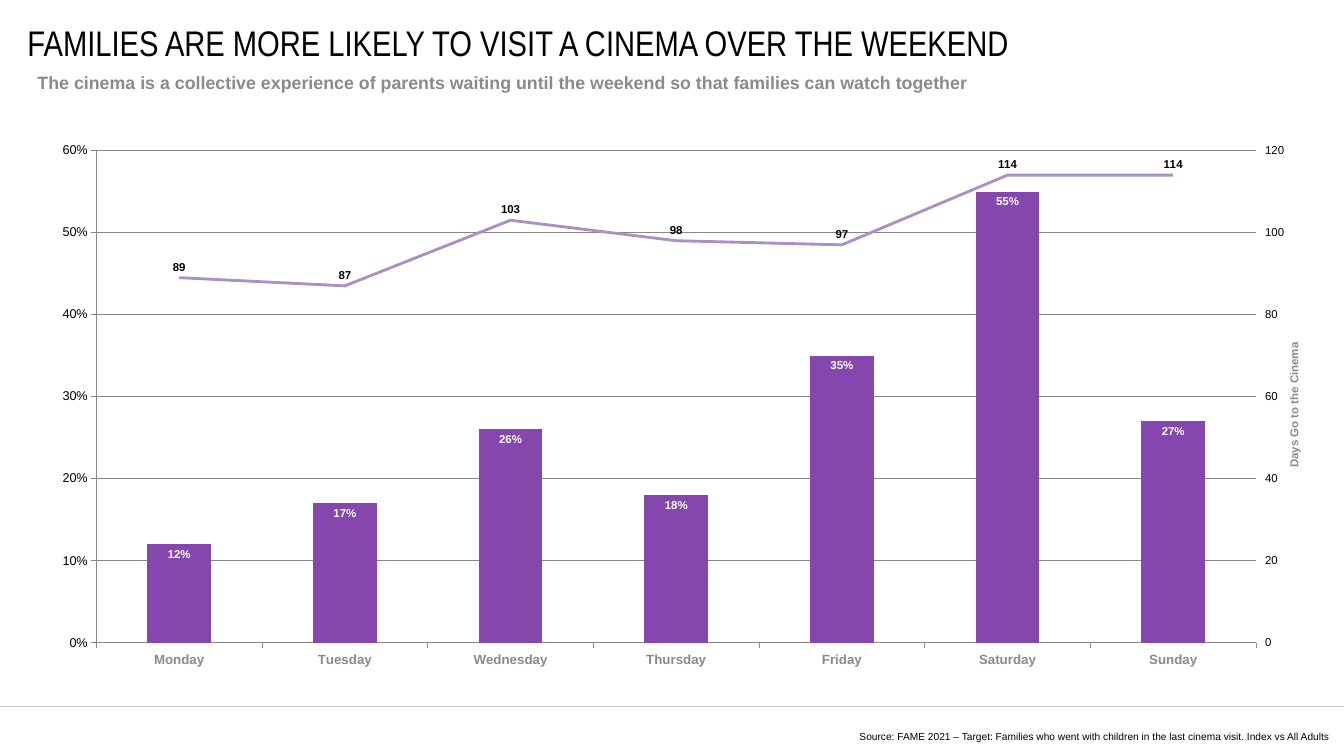
from dataclasses import dataclass

from pptx import Presentation
from pptx.chart.axis import ValueAxis
from pptx.chart.data import CategoryChartData
from pptx.dml.color import RGBColor
from pptx.enum.chart import (XL_CHART_TYPE, XL_LABEL_POSITION,
                             XL_MARKER_STYLE, XL_TICK_MARK)
from pptx.enum.shapes import MSO_CONNECTOR
from pptx.enum.text import MSO_ANCHOR, MSO_AUTO_SIZE, PP_ALIGN
from pptx.oxml import parse_xml
from pptx.oxml.ns import nsdecls, qn
from pptx.util import Pt


@dataclass(frozen=True)
class Theme:
    black: str = "000000"
    white: str = "FFFFFF"
    grey: str = "8A8A8D"
    rule: str = "CAC8C8"
    bar: str = "8547AD"
    line: str = "AC90C4"
    font: str = "Arial"
    title_font: str = "Arial Narrow"
    title: float = 28
    subtitle: float = 14
    category: float = 10.5
    chart: float = 10
    label: float = 9
    source: float = 8


WIDTH, HEIGHT = 1058.4, 595.44
DAYS = ["Monday", "Tuesday", "Wednesday", "Thursday", "Friday", "Saturday", "Sunday"]
SHARES = [0.12, 0.17, 0.26, 0.18, 0.35, 0.55, 0.27]
INDEXES = [89, 87, 103, 98, 97, 114, 114]
PLOT = {"x": 0.054, "y": 0.033, "w": 0.908, "h": 0.902}

LAYOUT_XML = (f'<c:layout {nsdecls("c")}><c:manualLayout><c:layoutTarget val="inner"/>'
              '<c:xMode val="edge"/><c:yMode val="edge"/>'
              + "".join(f'<c:{k} val="{v}"/>' for k, v in PLOT.items())
              + '</c:manualLayout></c:layout>')
LINE_XML = (f'<c:lineChart {nsdecls("c")}><c:grouping val="standard"/>'
            '<c:varyColors val="0"/><c:marker val="1"/>'
            '<c:axId val="5001"/><c:axId val="5002"/></c:lineChart>')
AXIS_XML = ('<c:{tag} {ns}><c:axId val="{id}"/>'
            '<c:scaling><c:orientation val="minMax"/></c:scaling>'
            '<c:delete val="{hidden}"/><c:axPos val="{pos}"/>'
            '<c:majorTickMark val="out"/><c:minorTickMark val="none"/>'
            '<c:tickLblPos val="nextTo"/><c:crossAx val="{cross}"/>'
            '<c:crosses val="{at}"/></c:{tag}>')


def rgb(value):
    return RGBColor.from_string(value)


def apply(obj, **values):
    for key, value in values.items():
        if key == "color":
            obj.color.rgb = rgb(value)
        else:
            setattr(obj, key, value)


class SlideBuilder:
    def __init__(self, s, theme):
        self.s, self.theme = s, theme

    def font(self, font, size, color, bold=False, name=None):
        apply(font, name=name or self.theme.font, size=Pt(size), bold=bold, color=color)

    def text(self, idx, box, text, frame, para, **font):
        sp = self.s.placeholders[idx]
        apply(sp, **dict(zip(("left", "top", "width", "height"), map(Pt, box))))
        tf = sp.text_frame
        apply(tf, **frame)
        p = tf.paragraphs[0]
        apply(p, space_before=Pt(0), **para)
        r = p.add_run()
        r.text = text
        self.font(r.font, **font)

    def rule(self, y):
        cxn = self.s.shapes.add_connector(MSO_CONNECTOR.STRAIGHT, 0, Pt(y), Pt(WIDTH), Pt(y))
        apply(cxn.line, color=self.theme.rule, width=Pt(0.5))
        cxn._element.spPr.append(parse_xml(f'<a:effectLst {nsdecls("a")}/>'))

    def axis(self, axis, size, color, line=None, bold=False, scale=None, fmt=None):
        apply(axis, has_major_gridlines=False, major_tick_mark=XL_TICK_MARK.OUTSIDE,
              **(scale or {}))
        self.font(axis.tick_labels.font, size, color, bold)
        if fmt:
            apply(axis.tick_labels, number_format=fmt, number_format_is_linked=False)
        if line:
            apply(axis.format.line, color=line, width=Pt(0.75))
        else:
            axis.format.line.fill.background()

    def labels(self, series, color, fmt, position):
        dl = series.data_labels
        apply(dl, show_value=True, number_format=fmt,
              number_format_is_linked=False, position=position)
        self.font(dl.font, self.theme.label, color, True)

    def secondary_line(self, chart):
        """Move the second series to a line on a right-hand axis; return that axis."""
        area = chart._chartSpace.chart.plotArea
        for old in area.findall(qn("c:layout")):
            area.remove(old)
        area.insert(0, parse_xml(LAYOUT_XML))
        bars = area.find(qn("c:barChart"))
        ser = bars.findall(qn("c:ser"))[1]
        for bar_only in ser.findall(qn("c:invertIfNegative")):
            ser.remove(bar_only)
        line = parse_xml(LINE_XML)
        line.insert(2, ser)
        bars.addnext(line)
        ns = nsdecls("c")
        right = parse_xml(AXIS_XML.format(tag="valAx", ns=ns, id=5002, hidden=0,
                                          pos="r", cross=5001, at="max"))
        days = parse_xml(AXIS_XML.format(tag="catAx", ns=ns, id=5001, hidden=1,
                                         pos="b", cross=5002, at="autoZero"))
        area.findall(qn("c:valAx"))[-1].addnext(right)
        right.addnext(days)
        return ValueAxis(right)

    def combo_chart(self, box):
        t = self.theme
        data = CategoryChartData()
        data.categories = DAYS
        data.add_series("Series 1", SHARES, "0%")
        data.add_series("Series 2", INDEXES, "0")
        chart = self.s.shapes.add_chart(XL_CHART_TYPE.COLUMN_CLUSTERED,
                                        *map(Pt, box), data).chart
        apply(chart, has_legend=False, has_title=False)
        self.font(chart.font, t.chart, t.black)
        right = self.secondary_line(chart)

        # Axes
        left = chart.value_axis
        self.axis(chart.category_axis, t.category, t.grey, t.grey, True)
        self.axis(left, t.chart, t.grey, t.grey, True, fmt="0%",
                  scale=dict(minimum_scale=0, maximum_scale=0.6, major_unit=0.1))
        self.axis(right, t.label, t.black, fmt="0",
                  scale=dict(minimum_scale=0, maximum_scale=120, major_unit=20))
        tf = left.axis_title.text_frame
        tf._txBody.bodyPr.set("rot", "-5400000")
        tf._txBody.bodyPr.set("vert", "horz")
        r = tf.paragraphs[0].add_run()
        r.text = "Days Go to the Cinema"
        self.font(r.font, t.label, t.grey, True)

        # Columns and line
        columns, line = chart.plots
        apply(columns, gap_width=160, vary_by_categories=False)
        share, index = columns.series[0], line.series[0]
        share.format.fill.solid()
        share.format.fill.fore_color.rgb = rgb(t.bar)
        self.labels(share, t.white, "0%", XL_LABEL_POSITION.INSIDE_END)
        apply(index.format.line, color=t.line, width=Pt(2.25))
        index.smooth = False
        index.marker.style = XL_MARKER_STYLE.NONE
        self.labels(index, t.black, "0", XL_LABEL_POSITION.ABOVE)


def main():
    prs = Presentation()
    apply(prs, slide_width=Pt(WIDTH), slide_height=Pt(HEIGHT))
    s = prs.slides.add_slide(prs.slide_layouts.get_by_name("Comparison"))
    for sp in list(s.placeholders):
        if sp.placeholder_format.idx not in (0, 1, 3):
            sp._element.getparent().remove(sp._element)
    t = Theme()
    b = SlideBuilder(s, t)
    no_insets = dict.fromkeys(
        ("margin_left", "margin_top", "margin_right", "margin_bottom"), 0)
    middle = dict(no_insets, vertical_anchor=MSO_ANCHOR.MIDDLE)

    # Heading
    b.text(0, (21.6, 21.6, 977.76, 23.04),
           "FAMILIES ARE MORE LIKELY TO VISIT A CINEMA OVER THE WEEKEND",
           dict(middle, word_wrap=False, auto_size=MSO_AUTO_SIZE.NONE),
           dict(alignment=PP_ALIGN.LEFT),
           size=t.title, color=t.black, name=t.title_font)
    b.text(1, (22.32, 52.56, 877.68, 34.56),
           "The cinema is a collective experience of parents waiting until the weekend "
           "so that families can watch together",
           dict(vertical_anchor=MSO_ANCHOR.TOP, word_wrap=True, auto_size=MSO_AUTO_SIZE.NONE),
           dict(alignment=PP_ALIGN.LEFT),
           size=t.subtitle, color=t.grey, bold=True)

    # Chart
    b.combo_chart((21.6, 104.4, 1005.84, 429.84))

    # Footer
    b.rule(556.56)
    b.text(3, (530.64, 567.36, 516.96, 16.56),
           "Source: FAME 2021 – Target: Families who went with children in the last "
           "cinema visit. Index vs All Adults",
           dict(middle, word_wrap=True, auto_size=MSO_AUTO_SIZE.SHAPE_TO_FIT_TEXT),
           dict(alignment=PP_ALIGN.RIGHT, line_spacing=Pt(19)),
           size=t.source, color=t.black)
    prs.save("out.pptx")


if __name__ == "__main__":
    main()
